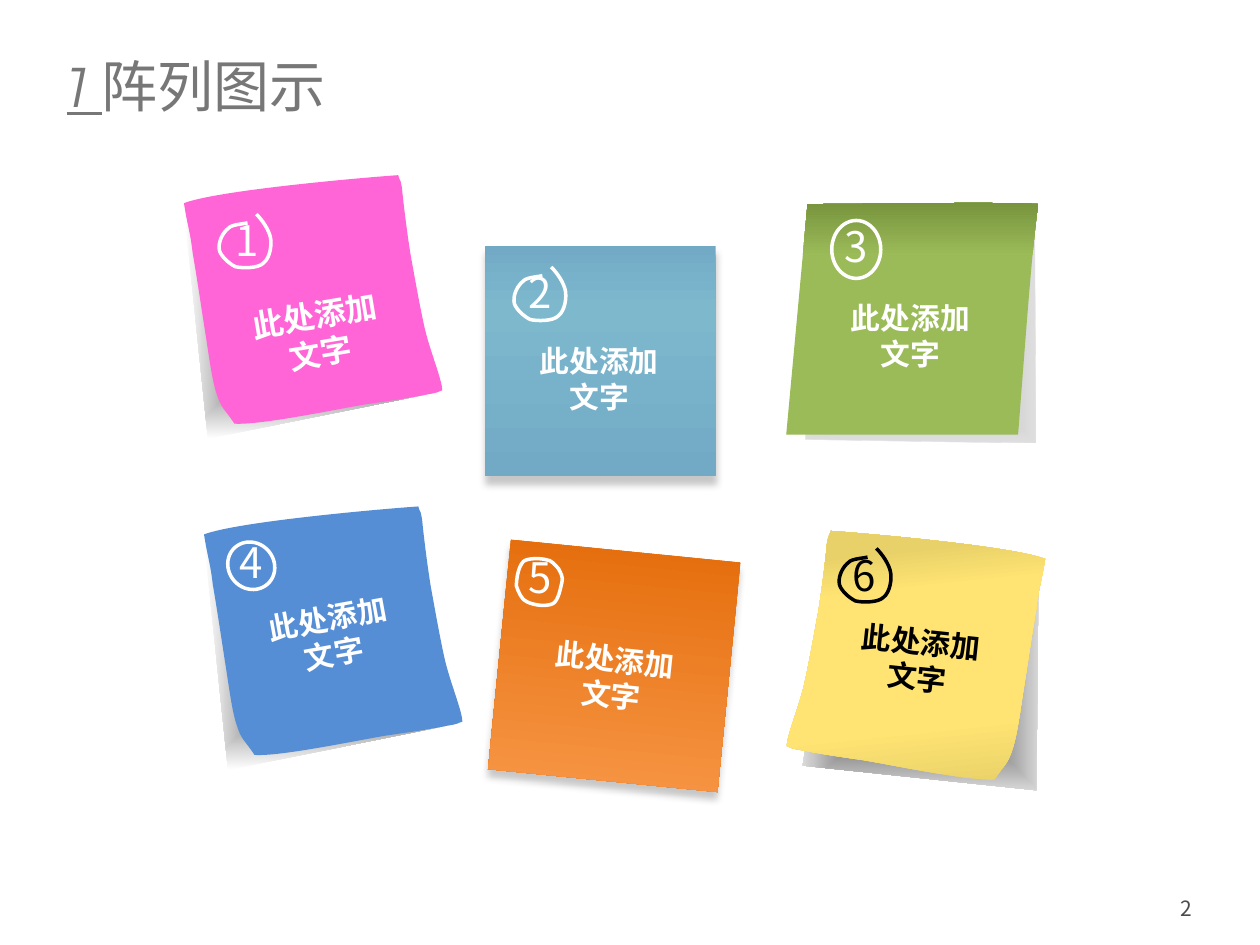
from dataclasses import dataclass

from lxml import etree
from pptx import Presentation
from pptx.dml.color import RGBColor
from pptx.enum.shapes import MSO_SHAPE
from pptx.enum.text import MSO_ANCHOR, PP_ALIGN
from pptx.oxml import parse_xml
from pptx.oxml.ns import nsdecls, qn
from pptx.util import Pt

RECT, OVAL = MSO_SHAPE.RECTANGLE, MSO_SHAPE.OVAL
MIDDLE, BOTTOM = MSO_ANCHOR.MIDDLE, MSO_ANCHOR.BOTTOM
LEFT, CENTER, RIGHT = PP_ALIGN.LEFT, PP_ALIGN.CENTER, PP_ALIGN.RIGHT


@dataclass(frozen=True)
class Theme:
    head: str = "Montserrat"
    body: str = "Noto Sans CJK SC"
    title: str = "777777"
    page: str = "4C4C4C"
    white: str = "FFFFFF"
    black: str = "000000"
    pink: str = "FF65D7"
    blue: str = "558ED5"
    shade: str = "808080"
    title_size: int = 32
    digit_size: int = 24
    page_size: int = 12
    line: int = 2
    lead: float = 1.2


T = Theme()

# Gradients: stops of (position, colour, opacity), then angle or None for a path
SKY = [(0, "72AAC6", 100), (27, "7DB8CD", 100), (100, "72AAC6", 100)], 90
ORANGE = [(0, "E46C0A", 100), (100, "F79646", 100)], 90
GREEN = [(0, "9BBB59", 100), (77, "9BBB59", 100), (100, "77933C", 100)], 270
YELLOW = [(0, "E9D169", 100), (24, "FFE473", 100), (74, "FFE473", 100),
          (89, "E9D169", 100), (100, "E9D169", 100)], 264
CAST = [(51, T.shade, 100), (100, T.white, 100)], None
SOFT = [(0, "A6A6A6", 100), (100, "A6A6A6", 35)], None

# Outlines in points: a pair is a corner, six numbers are a cubic curve
CURL = [(0, 16), (19.4, 8.6, 102.2, 1.4, 122.4, 0), (124.6, 6.5, 123.1, 0, 124.6, 7.2),
        (125.3, 15, 127.4, 32.4, 129.6, 46), (132, 59, 134.6, 74, 137.5, 87),
        (140.4, 100, 147.6, 117, 147.6, 123), (144, 124, 147, 124, 139, 125.3),
        (132, 127, 103.7, 131, 103.7, 131), (86, 134, 43, 143, 28.8, 142),
        (23, 133, 21.6, 134, 18.7, 125), (16, 117, 14.4, 104, 12.2, 90),
        (10, 76, 7.2, 57, 5, 44.6), (3.6, 32, 2.2, 30, 0, 16)]
CURL_CAST = [(0, 16), (13.7, 147.6), (145.4, 121), (115.2, 0)]
SHEET = [(12.2, 1.4), (56.2, 1.4, 117.4, 0, 144, 1.4),
         (140.4, 26, 136, 89, 132.5, 133.2), (0, 133.2)]
SHEET_CAST = [(141.8, 15.1), (141.8, 56.2, 142.6, 96.5, 142.6, 137.5),
              (10.8, 135.4), (26, 10.8)]
LOOP = [(17, 5), (12, 6, 7, 6, 5, 9), (2, 12, 0, 17, 1, 21), (2, 24, 6, 28, 10, 30),
        (14, 31, 23, 31, 26, 28), (30, 25, 31, 17, 30, 13), (29, 9, 26, 4, 22, 0)]
BLOB = [(24, 6), (22, 4, 20, 1, 17, 1), (14, 0, 6, 0, 4, 2), (1, 5, 0, 12, 0, 16),
        (1, 19, 3, 24, 6, 25), (10, 27, 17, 28, 21, 26), (24, 24, 25, 18, 26, 14),
        (27, 11, 25, 8, 24, 6)]


def rgb(color):
    return RGBColor.from_string(color)


def paint(shape, fill):
    """Fill with a plain colour, a gradient or nothing; drop line and shadow."""
    shape.shadow.inherit = False
    shape.line.fill.background()
    if isinstance(fill, str):
        shape.fill.solid()
        shape.fill.fore_color.rgb = rgb(fill)
        return
    shape.fill.background()
    if fill is None:
        return
    stops, angle = fill
    marks = "".join(
        f'<a:gs pos="{pos * 1000}"><a:srgbClr val="{color}">'
        f'<a:alpha val="{alpha * 1000}"/></a:srgbClr></a:gs>'
        for pos, color, alpha in stops)
    way = (f'<a:lin ang="{angle * 60000}" scaled="0"/>' if angle is not None else
           '<a:path path="shape"><a:fillToRect l="50000" t="50000" r="50000" b="50000"/></a:path>')
    grad = parse_xml(f'<a:gradFill {nsdecls("a")} rotWithShape="1">'
                     f'<a:gsLst>{marks}</a:gsLst>{way}</a:gradFill>')
    props = shape._element.spPr
    props.replace(props.find(qn("a:noFill")), grad)


def drop(shape, angle):
    glow = shape._element.spPr.find(qn("a:effectLst"))
    cast = etree.SubElement(glow, qn("a:outerShdw"), blurRad=str(Pt(4)),
                            dist=str(Pt(4.5)), dir=str(angle * 60000), rotWithShape="0")
    color = etree.SubElement(cast, qn("a:srgbClr"), val=T.shade)
    etree.SubElement(color, qn("a:alpha"), val="43000")


def bend(shape, outline):
    """Join each three line segments that stand for a curve into one cubic."""
    lines = list(shape._element.spPr.iter(qn("a:lnTo")))
    for part in outline[1:]:
        if len(part) == 2:
            lines.pop(0)
            continue
        first, *rest = lines[:3]
        del lines[:3]
        first.tag = qn("a:cubicBezTo")
        for line in rest:
            first.append(line[0])
            line.getparent().remove(line)


def draw(slide, left, top, outline, fill=None, close=True, flip=False):
    dots = [part[i:i + 2] for part in outline for i in range(0, len(part), 2)]
    edge = max(x for x, y in dots)
    dots = [(Pt(left + (edge - x if flip else x)), Pt(top + y)) for x, y in dots]
    pen = slide.shapes.build_freeform(*dots[0])
    pen.add_line_segments(dots[1:], close=close)
    shape = pen.convert_to_shape()
    bend(shape, outline)
    paint(shape, fill)
    return shape


def style(run, size, color, face=T.body, bold=False):
    font = run.font
    font.size, font.name, font.bold = Pt(size), face, bold
    font.color.rgb = rgb(color)
    east = etree.SubElement(run._r.get_or_add_rPr(), qn("a:ea"))
    east.set("typeface", T.body)


def label(slide, box, text, size, color, align=CENTER, bold=False, turn=0, anchor=MIDDLE):
    shape = slide.shapes.add_textbox(*map(Pt, box))
    shape.rotation = turn
    frame = shape.text_frame
    frame.word_wrap = True
    frame.vertical_anchor = anchor
    frame.text = text
    for para in frame.paragraphs:
        para.alignment = align
        para.line_spacing = Pt(size * T.lead)
        for run in para.runs:
            style(run, size, color, bold=bold)


def curl(slide, left, top, fill, flip=False):
    x, y = (4.3, 6.5) if flip else (0, 2.9)
    cast = draw(slide, left + x, top + y, CURL_CAST, CAST, flip=flip)
    cast.rotation = 354.6 if flip else 0
    draw(slide, left, top, CURL, fill, flip=flip)


def sheet(slide, left, top, fill):
    draw(slide, left, top, SHEET_CAST, SOFT)
    draw(slide, left, top, SHEET, fill)


def flat(slide, left, top, fill, turn=0, angle=86):
    shape = slide.shapes.add_shape(RECT, Pt(left), Pt(top), Pt(131.8), Pt(131.8))
    shape.rotation = turn
    paint(shape, fill)
    drop(shape, angle)


def mark(slide, left, top, digit, spot, ring, color):
    """Place a digit and the ring around it; ring is (x, y, outline or oval)."""
    label(slide, (left + spot[0], top + spot[1], 25, 36), digit, T.digit_size, color)
    x, y, form = ring
    if isinstance(form, list):
        shape = draw(slide, left + x, top + y, form, close=form is BLOB)
    else:
        wide, high, turn = form
        shape = slide.shapes.add_shape(OVAL, Pt(left + x), Pt(top + y), Pt(wide), Pt(high))
        shape.rotation = turn
        paint(shape, None)
    shape.line.color.rgb = rgb(color)
    shape.line.width = Pt(T.line)


def heading(slide, box):
    title = slide.shapes.title
    title.left, title.top, title.width, title.height = map(Pt, box)
    frame = title.text_frame
    frame.vertical_anchor = MIDDLE
    para = frame.paragraphs[0]
    para.text = "1 "
    para.alignment = LEFT
    para.add_run().text = "阵列图示"
    for run in para.runs:
        style(run, T.title_size, T.title, T.head)
    number = para.runs[0].font
    number.italic = number.underline = True


# paper, left, top, options, digit spot, ring, caption box, size, turn, ink, anchor, words
WORDS = "此处添加\n文字"
NOTES = [
    (curl, 105.1, 100.1, {"fill": T.pink}, (22.3, 19), (19.4, 22.3, LOOP),
     (23, 43.2, 103, 72.7), 18, 350.4, T.white, BOTTOM, "此处添加文字"),
    (flat, 277.2, 140.4, {"fill": SKY}, (18, 8.6), (15.8, 12.2, LOOP),
     (0, 51.8, 130.3, 48.2), 17, 0, T.white, MIDDLE, WORDS),
    (sheet, 449.3, 115.2, {"fill": GREEN}, (26, 7.2), (26, 10.8, (28, 33.1, 0)),
     (3.6, 52.6, 134.6, 48.2), 17, 0, T.white, MIDDLE, WORDS),
    (curl, 116.6, 289.4, {"fill": T.blue}, (13, 13.7), (13, 20.9, (28, 26, 48.7)),
     (9.4, 49.7, 126, 48.2), 17, 349.7, T.white, MIDDLE, WORDS),
    (flat, 285.1, 314.6, {"fill": ORANGE, "turn": 5.7, "angle": 95}, (10, -2.9),
     (10, 4.3, BLOB), (2.2, 48.2, 126, 48.2), 17, 6.1, T.white, MIDDLE, WORDS),
    (curl, 449.6, 303.4, {"fill": YELLOW, "flip": True}, (30.7, 7), (29.2, 10, LOOP),
     (12.6, 49.4, 126, 48.2), 17, 6.1, T.black, MIDDLE, WORDS),
]


def main():
    deck = Presentation()
    deck.slide_width, deck.slide_height = Pt(720), Pt(540)
    slide = deck.slides.add_slide(deck.slide_layouts[5])
    heading(slide, (31, 20.2, 658, 56.9))
    for i, note in enumerate(NOTES, 1):
        paper, left, top, options, spot, ring, box, size, turn, ink, anchor, words = note
        paper(slide, left, top, **options)
        mark(slide, left, top, str(i), spot, ring, ink)
        x, y, wide, high = box
        label(slide, (left + x, top + y, wide, high), words, size, ink,
              bold=True, turn=turn, anchor=anchor)
    label(slide, (520.6, 508.3, 167.8, 20.9), "2", T.page_size, T.page, RIGHT)
    deck.save("out.pptx")


if __name__ == "__main__":
    main()
